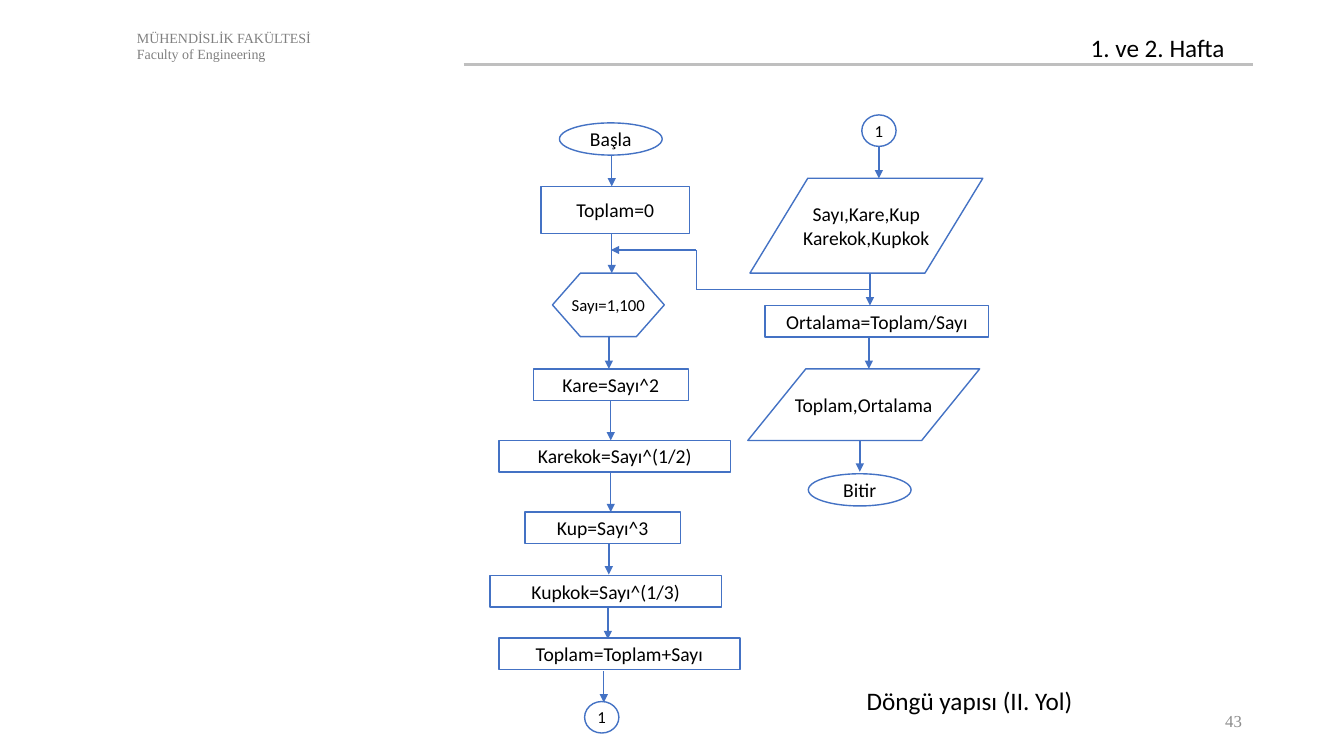
from lxml import etree
from pptx import Presentation
from pptx.dml.color import RGBColor
from pptx.enum import shapes, text
from pptx.oxml import ns
from pptx.util import Pt

COLORS = {"ink": "000000", "faculty": "808080", "number": "8C8C8C",
          "rule": "BFBFBF", "flow": "4472C4", "paper": "FFFFFF"}
ALIGN = text.PP_ALIGN
ANCHOR = text.MSO_ANCHOR


def write(shape, lines, size, font, color, align, anchor, wrap=True):
    """Fill a shape with evenly formatted paragraphs."""
    frame = shape.text_frame
    frame.text = "\n".join(lines)
    frame.auto_size = text.MSO_AUTO_SIZE.NONE
    frame.word_wrap = wrap
    frame.vertical_anchor = anchor
    for paragraph in frame.paragraphs:
        paragraph.alignment = align
        paragraph.line_spacing = 1.0
        paragraph.space_before = Pt(0)
        paragraph.font.size = Pt(size)
        paragraph.font.name = font
        paragraph.font.color.rgb = RGBColor.from_string(COLORS[color])


def draw_line(start, end, color="flow", width=1, arrow=True):
    connector = slide.shapes.add_connector(
        shapes.MSO_CONNECTOR.STRAIGHT, *map(Pt, start + end))
    connector.line.color.rgb = RGBColor.from_string(COLORS[color])
    connector.line.width = Pt(width)
    if arrow:
        etree.SubElement(connector.line._get_or_add_ln(), ns.qn("a:tailEnd"), type="triangle")
    etree.SubElement(connector._element.spPr, ns.qn("a:effectLst"))


presentation = Presentation()
presentation.slide_width, presentation.slide_height = Pt(960), Pt(540)
slide = presentation.slides.add_slide(presentation.slide_layouts[5])

# Header, page number and caption
draw_line((331.2, 46.1), (895, 46.1), "rule", 1.5, arrow=False)

title = slide.shapes.title
title.left, title.top, title.width, title.height = map(Pt, (771.8, 19.4, 122.4, 28.8))
write(title, ["1. ve 2. Hafta"], 18, "Calibri", "ink", ALIGN.LEFT, ANCHOR.TOP)

labels = [
    ((90.7, 17.3, 480.2, 31.7), ["MÜHENDİSLİK FAKÜLTESİ", "Faculty of Engineering"],
     10, "Times New Roman", "faculty", ALIGN.LEFT, ANCHOR.TOP),
    ((861.8, 500.4, 32.4, 28.8), ["43"],
     12, "Times New Roman", "number", ALIGN.RIGHT, ANCHOR.MIDDLE),
    ((612, 486, 215.3, 28.8), ["Döngü yapısı (II. Yol)"],
     18, "Calibri", "ink", ALIGN.LEFT, ANCHOR.TOP),
]
for box, *content in labels:
    write(slide.shapes.add_textbox(*map(Pt, box)), *content)

# Arrows: x, then top and bottom
arrows = [
    (437, 110.2, 133.2), (437, 167, 195.1), (434.9, 240.5, 263.5),
    (436.3, 285.8, 314.6), (436.3, 337, 365.8), (434.9, 388.1, 410.4),
    (434.2, 433.4, 456.5), (431.3, 479.5, 501.8),
    (627.8, 104.4, 127.4), (621.4, 195.1, 218.2),
    (620.6, 240.5, 263.5), (614.2, 314.6, 337),
]
for x, top, bottom in arrows:
    draw_line((x, top), (x, bottom))

# Loop back to the counter
loop = [(620.6, 206.6), (497.5, 206.6), (497.5, 178.6), (436.3, 178.6)]
for start, end in zip(loop, loop[1:]):
    draw_line(start, end, arrow=end == loop[-1])

# Flowchart steps: preset, adjustment, text size, box, lines
KIND = shapes.MSO_SHAPE
steps = [
    (KIND.OVAL, None, 14, (399.6, 87.8, 73.4, 23), ["Başla"]),
    (KIND.RECTANGLE, None, 14, (386.6, 133.2, 105.8, 33.8), ["Toplam=0"]),
    (KIND.HEXAGON, 0.44, 12, (394.6, 195.1, 79.9, 45.4), ["Sayı=1,100"]),
    (KIND.RECTANGLE, None, 14, (380.9, 263.5, 110.9, 22.5), ["Kare=Sayı^2"]),
    (KIND.RECTANGLE, None, 14, (356.4, 314.6, 165.6, 22.5), ["Karekok=Sayı^(1/2)"]),
    (KIND.RECTANGLE, None, 14, (375.1, 365.8, 110.9, 22.5), ["Kup=Sayı^3"]),
    (KIND.RECTANGLE, None, 14, (349.9, 411.1, 165.6, 22.5), ["Kupkok=Sayı^(1/3)"]),
    (KIND.RECTANGLE, None, 14, (356.4, 455.8, 172.1, 22.5), ["Toplam=Toplam+Sayı"]),
    (KIND.OVAL, None, 12, (417.6, 501.1, 24.5, 22.5), ["1"]),
    (KIND.OVAL, None, 12, (615.6, 82.1, 24.5, 22.5), ["1"]),
    (KIND.PARALLELOGRAM, 0.61, 14, (535.7, 127.4, 166.3, 67.7),
     ["Sayı,Kare,Kup", "Karekok,Kupkok"]),
    (KIND.RECTANGLE, None, 14, (546.5, 218.2, 159.8, 22.5), ["Ortalama=Toplam/Sayı"]),
    (KIND.PARALLELOGRAM, 0.81, 14, (534.2, 263.5, 165.6, 51.1), ["Toplam,Ortalama"]),
    (KIND.OVAL, None, 14, (577.4, 338.4, 73.4, 23), ["Bitir"]),
]
for kind, adjustment, size, box, lines in steps:
    step = slide.shapes.add_shape(kind, *map(Pt, box))
    if adjustment is not None:
        step.adjustments[0] = adjustment
    step.shadow.inherit = False
    step.fill.solid()
    step.fill.fore_color.rgb = RGBColor.from_string(COLORS["paper"])
    step.line.color.rgb = RGBColor.from_string(COLORS["flow"])
    step.line.width = Pt(1)
    write(step, lines, size, "Calibri", "ink", ALIGN.CENTER, ANCHOR.MIDDLE, wrap=False)

presentation.save("out.pptx")
